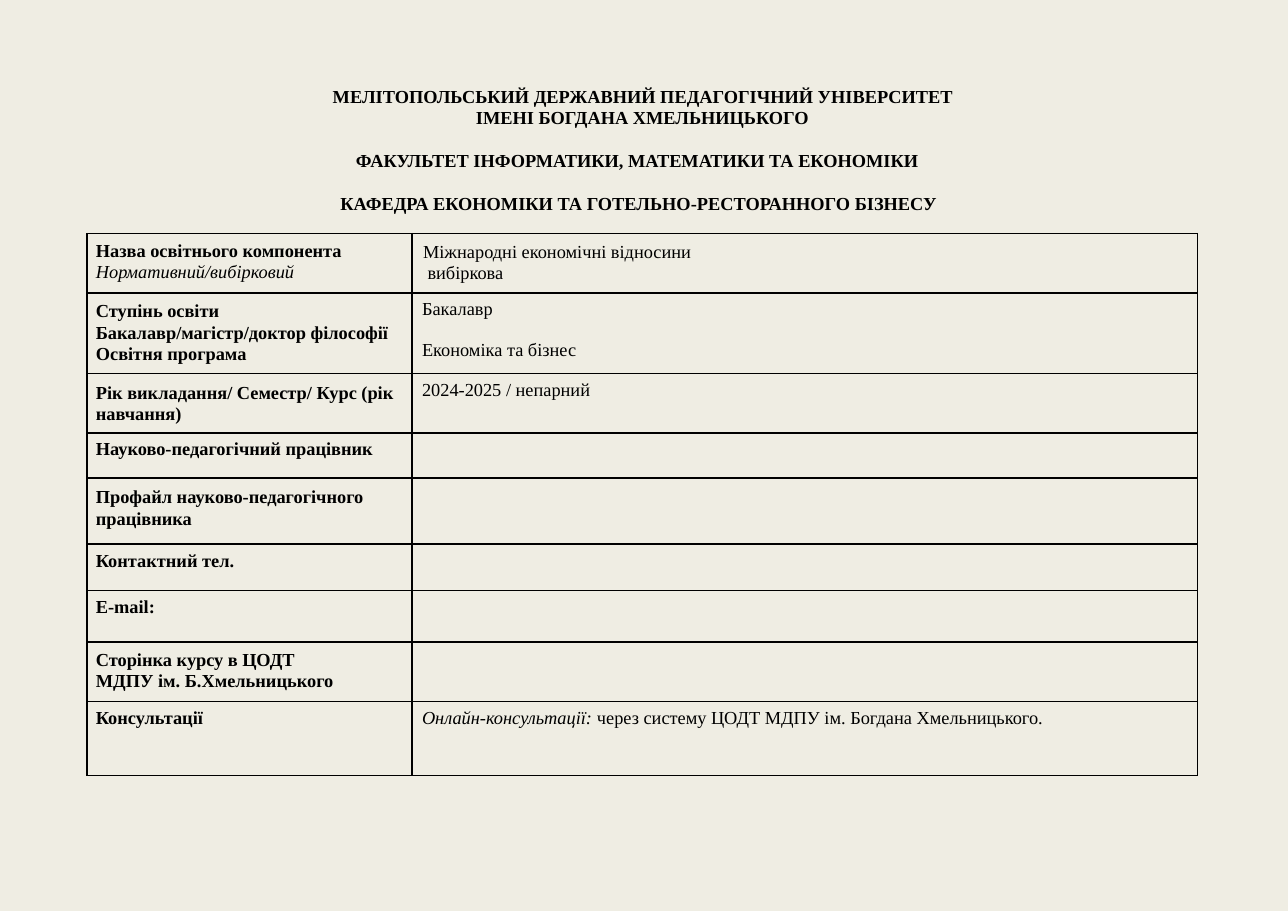
from dataclasses import dataclass

from lxml.etree import SubElement
from pptx import Presentation
from pptx.dml.color import RGBColor
from pptx.enum.text import MSO_ANCHOR
from pptx.oxml.ns import qn
from pptx.util import Inches, Pt


@dataclass(frozen=True)
class Theme:
    paper: RGBColor = RGBColor(0xEF, 0xED, 0xE3)
    ink: RGBColor = RGBColor(0, 0, 0)
    font: str = "Times New Roman"
    size: float = 12
    border: float = 1


@dataclass(frozen=True)
class Para:
    """Runs are (text, style) pairs; style holds "b" and/or "i"."""
    runs: tuple
    left: float = 0.08
    indent: float = 0
    line: float = 1.0  # points above 2, otherwise a multiple
    before: float = 0


THEME = Theme()

HEADING = [
    Para((("МЕЛІТОПОЛЬСЬКИЙ ДЕРЖАВНИЙ ПЕДАГОГІЧНИЙ УНІВЕРСИТЕТ "
           "ІМЕНІ БОГДАНА ХМЕЛЬНИЦЬКОГО", "b"),), 1.32, -1.3, 13.8, 1.9),
    Para((("ФАКУЛЬТЕТ ІНФОРМАТИКИ, МАТЕМАТИКИ ТА ЕКОНОМІКИ "
           "КАФЕДРА ЕКОНОМІКИ ТА ГОТЕЛЬНО-РЕСТОРАННОГО БІЗНЕСУ", "b"),),
         0.09, 0.14, 27.6, 0.8),
]


def label(text, line=1.0, before=4.5, style="b"):
    return Para(((text, style),), line=line, before=before)


def value(*runs, before=4.3):
    return Para(runs, left=0.09, before=before)


# Row height, top insets of both cells, label paragraphs, value paragraphs
ROWS = [
    (0.54, 0.06, 0.07,
     [label("Назва освітнього компонента", 14),
      label("Нормативний/вибірковий", 14, 0, "i")],
     [Para((("Міжнародні економічні відносини\vвибіркова", ""),),
           0.14, -0.04, 13.8, 5.2)]),
    (0.73, 0.06, 0.06,
     [label("Ступінь освіти", 14.1),
      label("Бакалавр/магістр/доктор філософії Освітня програма", 13.8, 0.7)],
     [value(("Бакалавр", "")),
      value(("Економіка та бізнес", ""), before=13.2)]),
    (0.54, 0.08, 0.06,
     [label("Рік викладання/ Семестр/ Курс (рік навчання)", 13.8, 5.5)],
     [value(("2024-2025 / непарний", ""))]),
    (0.41, 0.06, 0, [label("Науково-педагогічний працівник")], []),
    (0.6, 0.08, 0,
     [label("Профайл науково-педагогічного працівника", 13.8, 5.5)], []),
    (0.42, 0.06, 0, [label("Контактний тел.")], []),
    (0.47, 0.06, 0, [label("E-mail:")], []),
    (0.54, 0.06, 0,
     [label("Сторінка курсу в ЦОДТ", 14.1),
      label("МДПУ ім. Б.Хмельницького", 14.1, 0)], []),
    (0.67, 0.06, 0.06,
     [label("Консультації")],
     [value(("Онлайн-консультації: ", "i"),
            ("через систему ЦОДТ МДПУ ім. Богдана Хмельницького.", ""))]),
]


def add_run(p, text, style):
    r = p.add_run()
    r.text = text
    r.font.name = THEME.font
    r.font.size = Pt(THEME.size)
    r.font.color.rgb = THEME.ink
    r.font.bold = "b" in style
    r.font.italic = "i" in style


def write(tf, paras):
    tf.word_wrap = True
    for i, para in enumerate(paras):
        p = tf.paragraphs[0] if i == 0 else tf.add_paragraph()
        p.line_spacing = Pt(para.line) if para.line > 2 else para.line
        p.space_before = Pt(para.before)
        pPr = p._p.get_or_add_pPr()
        pPr.set("marL", str(Inches(para.left)))
        pPr.set("indent", str(Inches(para.indent)))
        for text, style in para.runs:
            for n, part in enumerate(text.split("\v")):
                if n:
                    p.add_line_break()
                add_run(p, part, style)


def add_heading(s, left, top, width, height):
    sp = s.shapes.add_textbox(*map(Inches, (left, top, width, height)))
    tf = sp.text_frame
    tf.margin_left = tf.margin_right = tf.margin_bottom = 0
    tf.margin_top = Inches(0.03)
    write(tf, HEADING)


def style_cell(cell, top_inset):
    cell.margin_left = cell.margin_right = cell.margin_bottom = 0
    cell.margin_top = Inches(top_inset)
    cell.vertical_anchor = MSO_ANCHOR.TOP
    tcPr = cell._tc.get_or_add_tcPr()
    for side in ("a:lnL", "a:lnR", "a:lnT", "a:lnB"):
        ln = SubElement(tcPr, qn(side), w=str(Pt(THEME.border)))
        fill = SubElement(ln, qn("a:solidFill"))
        SubElement(fill, qn("a:srgbClr"), val=str(THEME.ink))
    cell.fill.background()


def add_course_table(s, left, top, width, label_width):
    height = sum(row[0] for row in ROWS)
    frame = s.shapes.add_table(
        len(ROWS), 2, *map(Inches, (left, top, width, height)))
    table = frame.table
    table.first_row = table.horz_banding = False
    table.columns[0].width = Inches(label_width)
    table.columns[1].width = Inches(width - label_width)
    for i, (row_height, label_top, value_top, labels, values) in enumerate(ROWS):
        table.rows[i].height = Inches(row_height)
        for j, (inset, paras) in enumerate(
                ((label_top, labels), (value_top, values))):
            cell = table.cell(i, j)
            style_cell(cell, inset)
            write(cell.text_frame, paras)


def main():
    prs = Presentation()
    prs.slide_width, prs.slide_height = Inches(11.69), Inches(8.27)
    s = prs.slides.add_slide(prs.slide_layouts[6])
    s.background.fill.solid()
    s.background.fill.fore_color.rgb = THEME.paper

    # University, faculty and department
    add_heading(s, 3, 0.75, 5.69, 1.19)
    # Course details
    add_course_table(s, 0.79, 2.12, 10.08, 2.95)

    prs.save("out.pptx")


if __name__ == "__main__":
    main()
